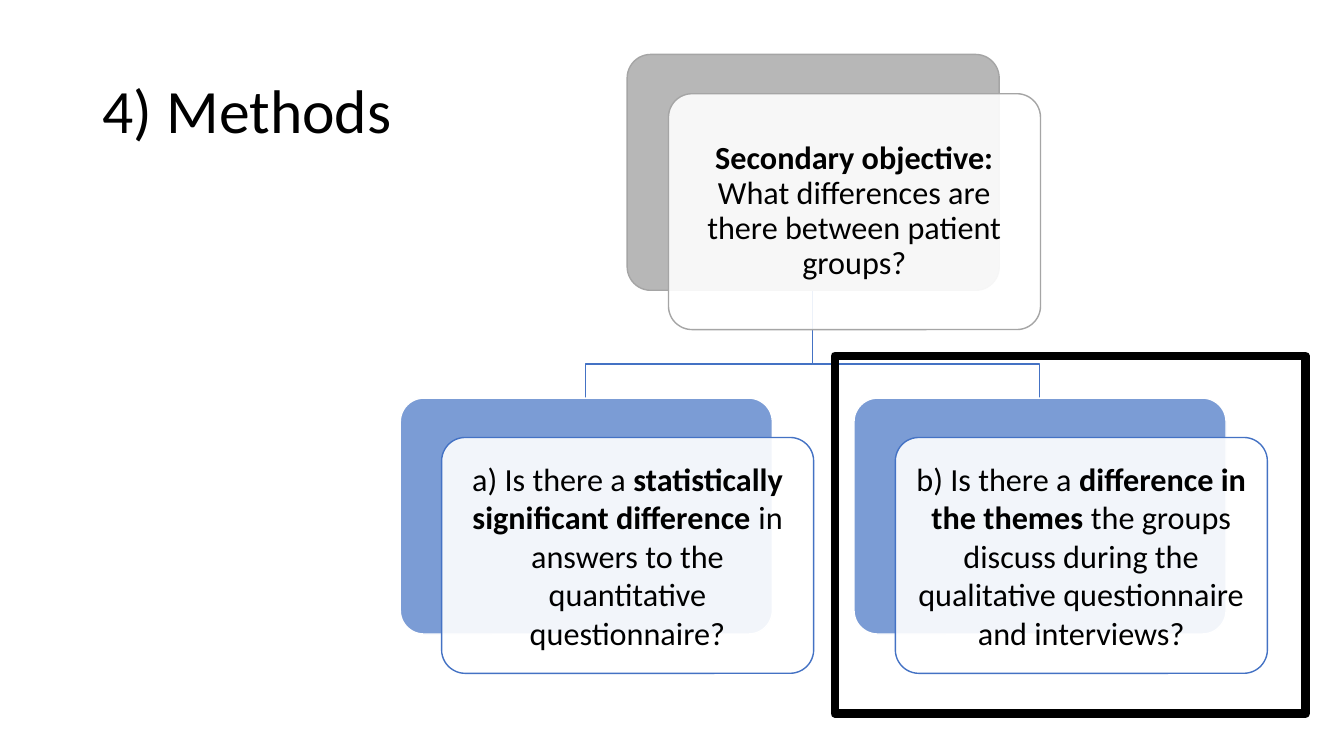
from lxml import etree
from pptx import Presentation
from pptx.dml.color import RGBColor
from pptx.enum.shapes import MSO_SHAPE
from pptx.enum.text import MSO_ANCHOR, PP_ALIGN
from pptx.oxml.ns import qn
from pptx.util import Pt

ROUNDED, RECT = MSO_SHAPE.ROUNDED_RECTANGLE, MSO_SHAPE.RECTANGLE
MIDDLE, CENTER = MSO_ANCHOR.MIDDLE, PP_ALIGN.CENTER

# Content: runs are (text, bold)
TITLE = "4) Methods"
OBJECTIVE = [("Secondary objective: ", True),
             ("What differences are there between patient groups?", False)]
QUESTIONS = [
    [("a) Is there a ", False), ("statistically significant difference ", True),
     ("in answers to the quantitative questionnaire?", False)],
    [("b) Is there a ", False), ("difference in the themes ", True),
     ("the groups discuss during the qualitative questionnaire and interviews?", False)],
]

THEME = {
    "font": "Calibri", "title": 44, "body": 23, "line": 1, "frame": 6,
    "black": "000000", "white": "FFFFFF", "gray": "A5A5A5", "blue": "4472C4",
}

# Layout in px, 100 px to the inch
PX = 9144
SLIDE_W, SLIDE_H = 1333, 750
TITLE_BOX = (92, 40, 1150, 145)
CARD_W, CARD_H = 369, 234
SHIFT_X, SHIFT_Y = 41, 39
ROOT_X, ROOT_Y = 622, 54
CHILD_Y, CHILD_STEP = 395, 450
CHILD_X = [ROOT_X + round((i - 0.5) * CHILD_STEP) for i in range(len(QUESTIONS))]
BRANCH_Y = 361
FRAME = (828, 353, 467, 355)
INSET = 10


def color(name):
    return RGBColor.from_string(THEME[name])


def style(shape, line, width, fill=None, opacity=100):
    shape.shadow.inherit = False
    shape.line.color.rgb = color(line)
    shape.line.width = Pt(width)
    if fill is None:
        shape.fill.background()
        return
    shape.fill.solid()
    shape.fill.fore_color.rgb = color(fill)
    rgb = shape.fill._xPr.find(qn("a:solidFill"))[0]
    etree.SubElement(rgb, qn("a:alpha")).set("val", str(opacity * 1000))


def add_box(s, kind, box):
    return s.shapes.add_shape(kind, *(v * PX for v in box))


def set_font(p, size):
    p.font.name = THEME["font"]
    p.font.size = Pt(size)
    p.font.color.rgb = color("black")


def add_card(s, x, y, runs, back, opacity, back_line, front_line, spacing):
    """A tinted back plate with a translucent white text card over it."""
    plate = add_box(s, ROUNDED, (x, y, CARD_W, CARD_H))
    style(plate, back_line, THEME["line"], back, opacity)
    card = add_box(s, ROUNDED, (x + SHIFT_X, y + SHIFT_Y, CARD_W, CARD_H))
    style(card, front_line, THEME["line"], "white", 90)
    for sp in (plate, card):
        sp.adjustments[0] = 0.1

    tf = card.text_frame
    tf.word_wrap = True
    tf.vertical_anchor = MIDDLE
    tf.margin_left = tf.margin_right = tf.margin_top = tf.margin_bottom = INSET * PX
    p = tf.paragraphs[0]
    p.alignment = CENTER
    p.line_spacing = spacing
    set_font(p, THEME["body"])
    for text, bold in runs:
        r = p.add_run()
        r.text = text
        r.font.bold = bold


def main():
    prs = Presentation()
    prs.slide_width, prs.slide_height = SLIDE_W * PX, SLIDE_H * PX
    s = prs.slides.add_slide(prs.slide_layouts[6])

    # Title
    tf = s.shapes.add_textbox(*(v * PX for v in TITLE_BOX)).text_frame
    tf.word_wrap = True
    tf.vertical_anchor = MIDDLE
    p = tf.paragraphs[0]
    p.text = TITLE
    p.line_spacing = 0.9
    set_font(p, THEME["title"])

    # Branches from the objective to each question
    root_mid, root_bottom = ROOT_X + CARD_W // 2, ROOT_Y + CARD_H
    for x in reversed(CHILD_X):
        mid = x + CARD_W // 2
        branch = s.shapes.build_freeform(root_mid, root_bottom, scale=PX)
        branch.add_line_segments(
            [(root_mid, BRANCH_Y), (mid, BRANCH_Y), (mid, CHILD_Y)], close=False)
        style(branch.convert_to_shape(), "blue", THEME["line"])

    # Cards
    add_card(s, ROOT_X, ROOT_Y, OBJECTIVE, "gray", 80, "gray", "gray", 0.9)
    for x, runs in zip(CHILD_X, QUESTIONS):
        add_card(s, x, CHILD_Y, runs, "blue", 70, "white", "blue", 1.0)

    # Frame around question b
    style(add_box(s, RECT, FRAME), "black", THEME["frame"])

    prs.save("out.pptx")


if __name__ == "__main__":
    main()
